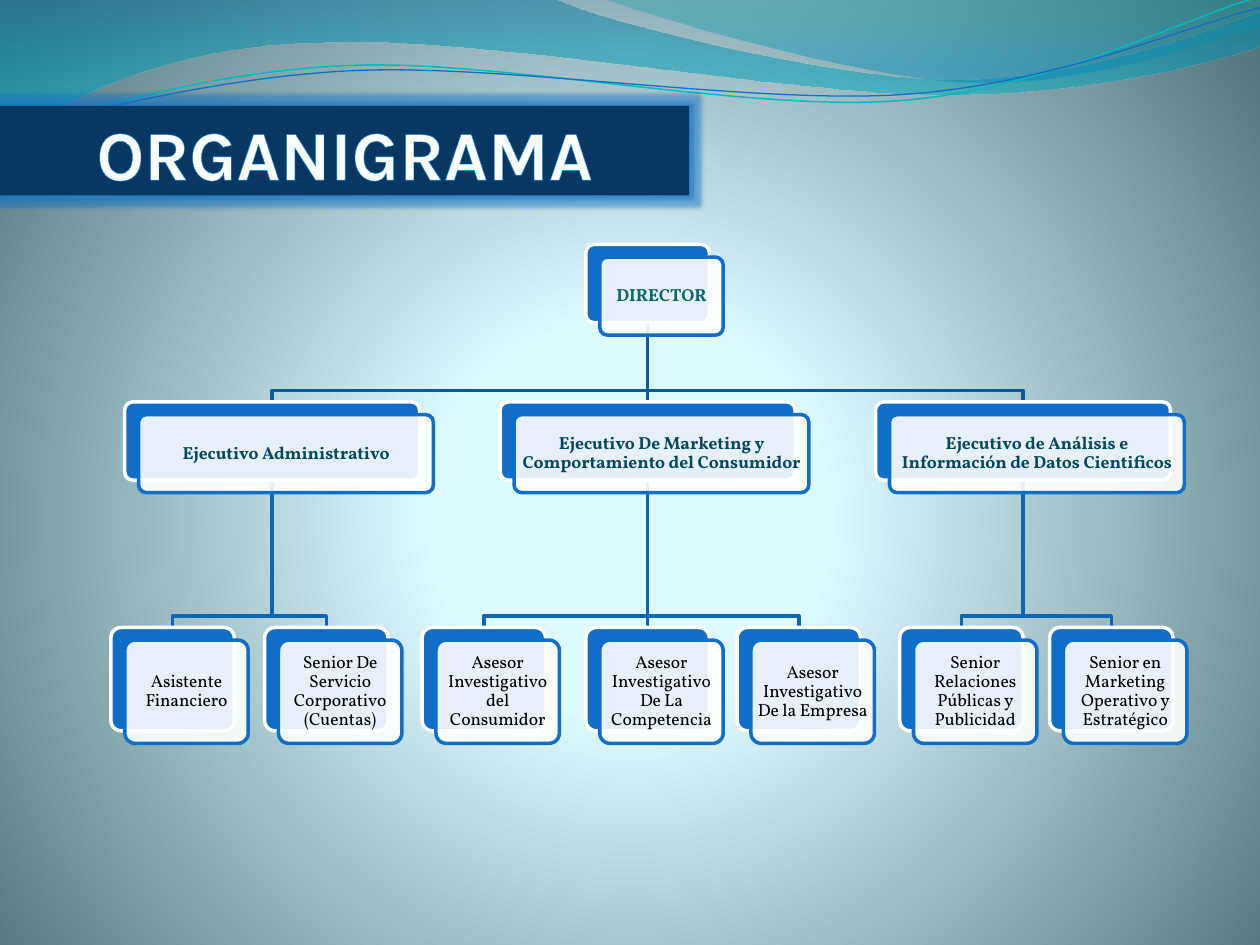
from lxml import etree
from pptx import Presentation
from pptx import util as u
from pptx.dml.color import RGBColor
from pptx.enum import shapes, text
from pptx.oxml import parse_xml
from pptx.oxml.ns import nsdecls, qn

BLUE, WHITE = "0F6FC6", "FFFFFF"
SHIFT_RIGHT, SHIFT_DOWN = 0.11, 0.1

# Each level: width, height, top, text colour, bold
LEVELS = [
    (0.98, 0.62, 1.94, "06686C", True),
    (2.34, 0.62, 3.19, "03495C", True),
    (0.98, 0.82, 4.98, "000000", False),
]
LINK_COLORS = ["0C599F", "0E65B4"]

# Each post: name, left, posts below
CHART = ("DIRECTOR", 4.65, [
    ("Ejecutivo Administrativo", 0.99, [
        ("Asistente Financiero", 0.88, []),
        ("Senior De Servicio Corporativo (Cuentas)", 2.1, []),
    ]),
    ("Ejecutivo De Marketing y Comportamiento del Consumidor", 3.97, [
        ("Asesor Investigativo del Consumidor", 3.35, []),
        ("Asesor Investigativo De La Competencia", 4.65, []),
        ("Asesor Investigativo De la Empresa", 5.85, []),
    ]),
    ("Ejecutivo de Análisis e Información de Datos Cientificos", 6.95, [
        ("Senior Relaciones Públicas y Publicidad", 7.14, []),
        ("Senior en Marketing Operativo y Estratégico", 8.33, []),
    ]),
])

BANDS = [
    ([(0, -0.01), (4.4, -0.01), (4.76, 0.17, 6.64, 0.63, 7.58, 0.63),
      (8.53, 0.63, 9.58, 0.26, 10, 0.09), (10.01, 0.36),
      (9.83, 0.44, 8.7, 0.76, 7.46, 0.75), (6.22, 0.75, 3.82, 0.28, 2.57, 0.34),
      (1.29, 0.35, 0.46, 0.83, -0.01, 1.13)],
     [(0, "0074A1", 45), (100, "00C6CF", 55)]),
    ([(4.79, -0.01), (5.09, 0.11, 6.82, 0.62, 7.69, 0.65),
      (8.56, 0.69, 9.61, 0.32, 10, 0.21), (10, 0)],
     [(0, "00A1A9", 30), (80, "008BBF", 45)]),
]
WAVES = [
    ([(0, 1.11), (0.48, 0.93, 1.58, 0.57, 2.77, 0.52),
      (3.95, 0.47, 5.93, 0.89, 7.13, 0.8), (8.33, 0.71, 9.38, 0.15, 9.98, -0.02)],
     "0AB8BF", 0.85),
    ([(0, 1.04), (0.47, 0.96, 1.64, 0.61, 2.83, 0.56),
      (4.03, 0.51, 5.97, 0.83, 7.17, 0.75), (8.36, 0.67, 9.41, 0.21, 10, 0.06)],
     BLUE, 0.75),
]


def color(value):
    """Turn a hex string into a colour."""
    return RGBColor.from_string(value)


def set_line(shape, value, width):
    """Give a shape or connector a solid line."""
    shape.line.color.rgb = color(value)
    shape.line.width = u.Pt(width)


def set_alpha(parent, percent):
    """Set the opacity of the solid fill directly under an element."""
    solid = parent.find(qn("a:solidFill"))
    etree.SubElement(solid[0], qn("a:alpha"), val=str(percent * 1000))


def set_gradient(parent, stops, direction):
    """Replace the solid fill directly under an element by a gradient."""
    marks = "".join(
        f'<a:gs pos="{place * 1000}"><a:srgbClr val="{value}">'
        f'<a:alpha val="{alpha * 1000}"/></a:srgbClr></a:gs>'
        for place, value, alpha in stops)
    gradient = parse_xml(f'<a:gradFill {nsdecls("a")} rotWithShape="1">'
                         f'<a:gsLst>{marks}</a:gsLst>{direction}</a:gradFill>')
    parent.replace(parent.find(qn("a:solidFill")), gradient)


def add_outline(page, steps, close=False):
    """Draw a freeform from line steps (x, y) and cubic steps (three points)."""
    places = [(u.Inches(step[i]), u.Inches(step[i + 1]))
              for step in steps for i in range(0, len(step), 2)]
    builder = page.shapes.build_freeform(*places[0])
    builder.add_line_segments(places[1:], close=close)
    shape = builder.convert_to_shape()
    shape.shadow.inherit = False
    shape.fill.background()
    segments = iter(shape.element.findall(".//" + qn("a:lnTo")))
    for step in steps[1:]:
        first = next(segments)
        if len(step) == 6:
            first.tag = qn("a:cubicBezTo")
            for _ in range(2):
                extra = next(segments)
                first.append(extra[0])
                extra.getparent().remove(extra)
    return shape


def add_band(page, steps, stops):
    """Draw a filled translucent wave band."""
    band = add_outline(page, steps, close=True)
    band.line.fill.background()
    band.fill.solid()
    set_gradient(band.element.spPr, stops, '<a:lin ang="5400000" scaled="0"/>')


def add_box(page, kind, left, top, width, height, fill):
    """Draw a filled preset shape without shadow."""
    box = page.shapes.add_shape(kind, *map(u.Inches, (left, top, width, height)))
    box.shadow.inherit = False
    box.fill.solid()
    box.fill.fore_color.rgb = color(fill)
    return box


def write(box, words, font, size, value, bold, anchor):
    """Put one centred paragraph into a box and format it."""
    frame = box.text_frame
    frame.text = words
    frame.word_wrap = True
    frame.vertical_anchor = anchor
    para = frame.paragraphs[0]
    para.alignment = text.PP_ALIGN.CENTER
    para.line_spacing = 0.9
    span = para.runs[0]
    span.font.name = font
    span.font.size = u.Pt(size)
    span.font.bold = bold
    span.font.color.rgb = color(value)
    return span


def add_title(page):
    """Draw the glowing title bar."""
    bar = add_box(page, shapes.MSO_SHAPE.RECTANGLE, 0, 0.84, 5.47, 0.71, "083763")
    bar.line.fill.background()
    bar.element.spPr.find(qn("a:effectLst")).append(parse_xml(
        f'<a:glow {nsdecls("a")} rad="63500"><a:srgbClr val="{BLUE}">'
        '<a:alpha val="50000"/></a:srgbClr></a:glow>'))
    frame = bar.text_frame
    frame.margin_left = frame.margin_right = frame.margin_bottom = 0
    span = write(bar, "ORGANIGRAMA", "Karla", 40, WHITE, True, text.MSO_ANCHOR.BOTTOM)
    span.font._element.insert(0, parse_xml(
        f'<a:ln {nsdecls("a")} w="18000"><a:solidFill><a:srgbClr val="009DD9"/>'
        '</a:solidFill></a:ln>'))


def add_card(page, name, left, level):
    """Draw a post as a blue card behind a labelled white one."""
    width, height, top, value, bold = LEVELS[level]
    rounded = shapes.MSO_SHAPE.ROUNDED_RECTANGLE
    back = add_box(page, rounded, left, top, width, height, BLUE)
    set_line(back, WHITE, 2)
    front = add_box(page, rounded, left + SHIFT_RIGHT, top + SHIFT_DOWN,
                    width, height, WHITE)
    set_alpha(front.element.spPr, 90)
    set_line(front, BLUE, 2)
    back.adjustments[0] = front.adjustments[0] = 0.1
    frame = front.text_frame
    frame.margin_left = frame.margin_right = u.Inches(0.02)
    frame.margin_top = frame.margin_bottom = u.Inches(0.02)
    write(front, name, "Vollkorn", 10, value, bold, text.MSO_ANCHOR.MIDDLE)
    return back


def add_link(page, upper, lower, level, depth):
    """Link two cards and place the link behind all cards."""
    start, end = ((card.left + card.width / 2) / u.Inches(1) for card in (upper, lower))
    top, bottom = (upper.top + upper.height) / u.Inches(1), lower.top / u.Inches(1)
    if abs(start - end) < 0.01:
        link = page.shapes.add_connector(shapes.MSO_CONNECTOR.STRAIGHT, 0, 0, 0, 0)
        link.begin_connect(upper, 2)
        link.end_connect(lower, 0)
        etree.SubElement(link._element.spPr, qn("a:effectLst"))
    else:
        bend = bottom - 0.09
        link = add_outline(page, [(start, top), (start, bend), (end, bend), (end, bottom)])
    set_line(link, LINK_COLORS[level], 2)
    page.shapes._spTree.insert(depth, link._element)


def add_branch(page, post, depth, level=0):
    """Draw a post, the posts below it and the links between them."""
    name, left, below = post
    card = add_card(page, name, left, level)
    for child in below:
        add_link(page, card, add_branch(page, child, depth, level + 1), level, depth)
    return card


def main():
    """Build the organisation chart slide."""
    deck = Presentation()
    deck.slide_width, deck.slide_height = u.Inches(10), u.Inches(7.5)
    page = deck.slides.add_slide(deck.slide_layouts[6])
    page.background.fill.solid()
    page.background.fill.fore_color.rgb = color(WHITE)
    set_gradient(page.element.find(".//" + qn("p:bgPr")),
                 [(0, "DEFBFF", 100), (25, "DDFAFF", 100), (100, "52767C", 100)],
                 '<a:path path="circle"><a:fillToRect l="10000" t="110000" '
                 'r="10000" b="100000"/></a:path>')
    for steps, stops in BANDS:
        add_band(page, steps, stops)
    for steps, value, width in WAVES:
        set_line(add_outline(page, steps), value, width)
    add_title(page)
    add_branch(page, CHART, len(page.shapes._spTree))
    deck.save("out.pptx")


if __name__ == "__main__":
    main()
